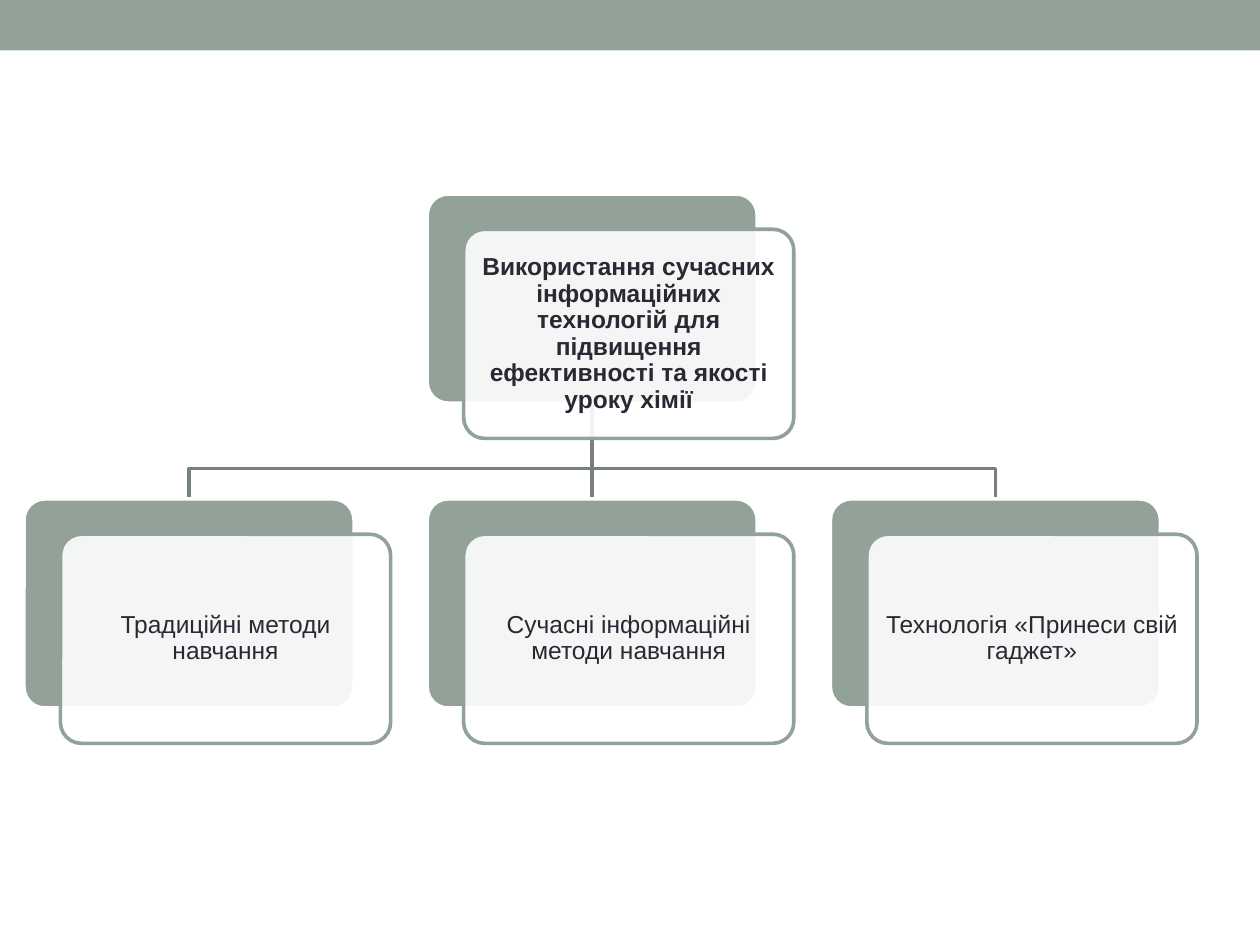
from lxml import etree
from pptx import Presentation
from pptx import util as u
from pptx.dml.color import RGBColor
from pptx.enum import shapes, text
from pptx.oxml.ns import qn

WIDTH, HEIGHT = 10, 7.5
LEFT, TOP = 0.19, 1.54
COLUMN, ROW = 3.2, 2.42
CARD_WIDTH, CARD_HEIGHT = 2.62, 1.66
SHIFT_X, SHIFT_Y = 0.29, 0.28
BEND = 3.72
LINE_WIDTH = 2.08
SAGE, SLATE, WHITE, INK = "93A299", "76827B", "FFFFFF", "292934"

TOPIC = ("Використання сучасних інформаційних технологій для "
         "підвищення ефективності та якості уроку хімії")
METHODS = [
    "Традиційні методи навчання",
    "Сучасні інформаційні методи навчання",
    "Технологія «Принеси свій гаджет»",
]
MARGINS = ("margin_left", "margin_right", "margin_top", "margin_bottom")
FRAME_FORMAT = {
    "word_wrap": True,
    "vertical_anchor": text.MSO_ANCHOR.MIDDLE,
    **dict.fromkeys(MARGINS, u.Inches(0.06)),
}
PARAGRAPH_FORMAT = {"alignment": text.PP_ALIGN.CENTER, "line_spacing": 0.9}
FONT_FORMAT = {"name": "Arial", "size": u.Pt(14)}


def apply_format(target, values):
    """Set every attribute named in values on the target."""
    for name, value in values.items():
        setattr(target, name, value)


def paint(color_format, color):
    """Set a colour from a hex string."""
    color_format.rgb = RGBColor.from_string(color)


def outline(line, color):
    """Give a line its colour and the common width."""
    paint(line.color, color)
    line.width = u.Pt(LINE_WIDTH)


def add_block(slide, kind, left, top, width, height, fill, border=None):
    """Add a filled preset shape, with a border if one is given."""
    shape = slide.shapes.add_shape(kind, *map(u.Inches, (left, top, width, height)))
    shape.shadow.inherit = False
    shape.fill.solid()
    paint(shape.fill.fore_color, fill)
    if border:
        outline(shape.line, border)
    else:
        shape.line.fill.background()
    return shape


def add_panel(slide, left, top, fill, border):
    """Add one rounded rectangle of card size."""
    panel = add_block(slide, shapes.MSO_SHAPE.ROUNDED_RECTANGLE, left, top,
                      CARD_WIDTH, CARD_HEIGHT, fill, border)
    panel.adjustments[0] = 0.1
    return panel


def set_opacity(shape, percent):
    """Make a solid fill partly transparent."""
    color = shape.fill._xPr.find(qn("a:solidFill"))[0]
    etree.SubElement(color, qn("a:alpha")).set("val", str(percent * 1000))


def write_label(shape, label, bold):
    """Write a centred label into a shape."""
    frame = shape.text_frame
    apply_format(frame, FRAME_FORMAT)
    paragraph = frame.paragraphs[0]
    apply_format(paragraph, PARAGRAPH_FORMAT)
    run = paragraph.add_run()
    run.text = label
    apply_format(run.font, {**FONT_FORMAT, "bold": bold})
    paint(run.font.color, INK)


def add_card(slide, column, row, label, bold=False):
    """Add a backing panel and its shifted label panel; return the backing."""
    left, top = LEFT + column * COLUMN, TOP + row * ROW
    backing = add_panel(slide, left, top, SAGE, WHITE)
    front = add_panel(slide, left + SHIFT_X, top + SHIFT_Y, WHITE, SAGE)
    set_opacity(front, 90)
    write_label(front, label, bold)
    return backing


def column_center(column):
    """Return the horizontal centre of a column's backing panel."""
    return LEFT + column * COLUMN + CARD_WIDTH / 2


def add_branch(slide, column):
    """Add the bent line from the topic card to an outer column."""
    start, end = column_center(1), column_center(column)
    corners = [(start, TOP + CARD_HEIGHT), (start, BEND), (end, BEND), (end, TOP + ROW)]
    points = [(u.Inches(x), u.Inches(y)) for x, y in corners]
    builder = slide.shapes.build_freeform(*points[0])
    builder.add_line_segments(points[1:], close=False)
    branch = builder.convert_to_shape()
    branch.shadow.inherit = False
    branch.fill.background()
    outline(branch.line, SLATE)


def add_stem(slide):
    """Add the straight line down the middle column."""
    center = u.Inches(column_center(1))
    stem = slide.shapes.add_connector(
        shapes.MSO_CONNECTOR.STRAIGHT, center, u.Inches(TOP + CARD_HEIGHT),
        center, u.Inches(TOP + ROW))
    outline(stem.line, SLATE)
    etree.SubElement(stem._element.spPr, qn("a:effectLst"))
    return stem


def main():
    """Build the slide and save it."""
    presentation = Presentation()
    apply_format(presentation, {"slide_width": u.Inches(WIDTH),
                                "slide_height": u.Inches(HEIGHT)})
    slide = presentation.slides.add_slide(presentation.slide_layouts[6])
    add_block(slide, shapes.MSO_SHAPE.RECTANGLE, 0, 0, WIDTH, 0.4, SAGE)
    add_branch(slide, 2)
    stem = add_stem(slide)
    add_branch(slide, 0)
    topic = add_card(slide, 1, 0, TOPIC, bold=True)
    methods = [add_card(slide, column, 1, label)
               for column, label in enumerate(METHODS)]
    stem.begin_connect(topic, 2)
    stem.end_connect(methods[1], 0)
    presentation.save("out.pptx")


if __name__ == "__main__":
    main()
